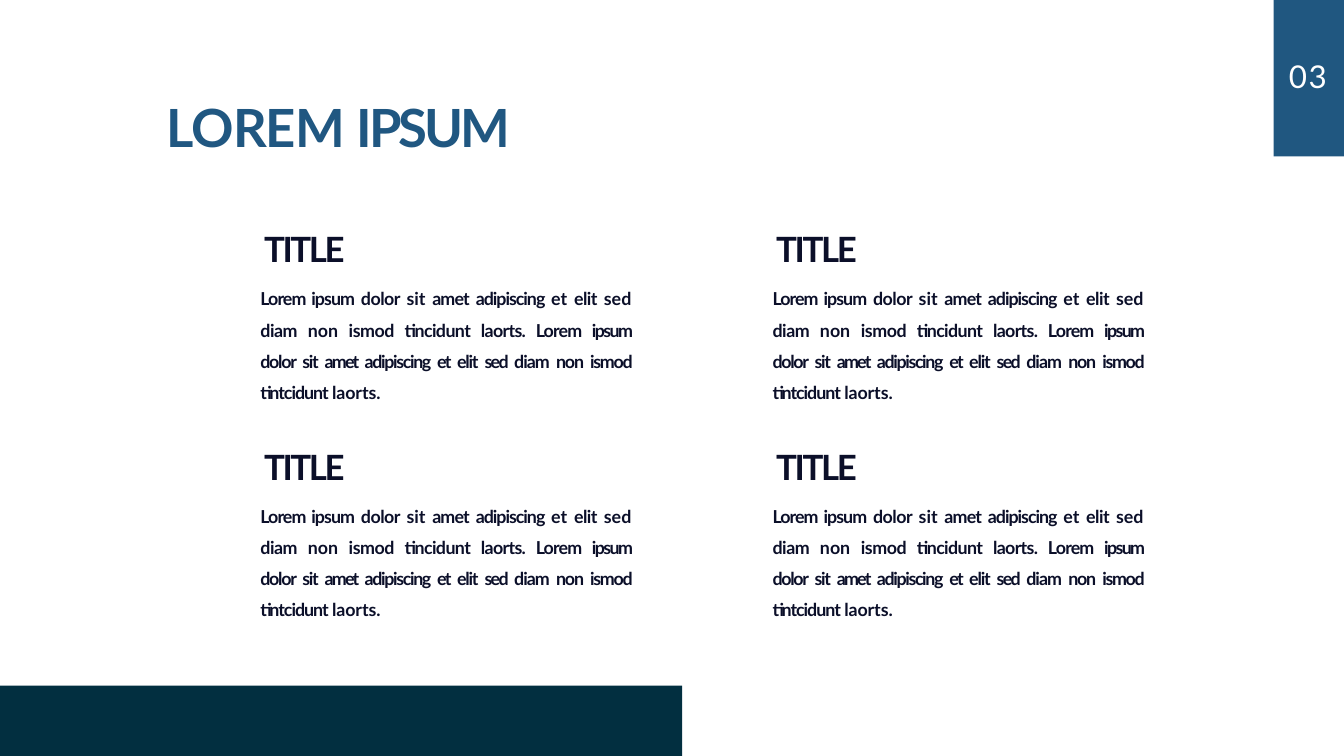
from pptx import Presentation
from pptx.dml.color import RGBColor
from pptx.enum.shapes import MSO_SHAPE as Shape
from pptx.enum.text import MSO_AUTO_SIZE as AutoSize, PP_ALIGN as Align
from pptx.util import Inches, Pt

WIDTH, HEIGHT = 21.99, 12.37
FONT = "Lato"
COLORS = {"blue": "205781", "tab": "205780", "navy": "022F40",
          "ink": "0B0F29", "white": "FFFFFF"}

# Each run is (text, letter spacing in points)
HEADING = [("LOREM ", -1.3), ("IPSUM", -3.6)]
NUMBER = [("03", 1.9)]
TITLE = [("TITLE", -2.8)]
BODY = [
    ("Lorem ipsum ", -1.1), ("dolor ", -0.6), ("sit ", 0), ("amet ", -1),
    ("adipiscing ", -1.2), ("et ", 0), ("elit ", -0.6), ("sed ", 0),
    ("diam ", -0.5), ("non ", 0), ("ismod ", -0.5), ("tincidunt ", -0.7),
    ("laorts. ", -0.8), ("Lorem ", -1), ("ipsum ", -1.9), ("dolor ", -1.5),
    ("sit ", -1.6), ("amet ", -2.1), ("adipiscing ", -1.6), ("et ", -2),
    ("elit ", -1.4), ("sed ", -2), ("diam ", -1.1), ("non ", -1.4),
    ("ismod ", -1.5), ("tintcidunt ", -1.2), ("laorts.", -0.1),
]
SECTIONS_PER_COLUMN = 2
COLUMNS = 2
COLUMN_LEFT, COLUMN_TOP, COLUMN_STEP = 4.25, 3.7, 8.38
COLUMN_WIDTH, COLUMN_HEIGHT = 6.08, 6.48
SECTION_GAP = 50.3

BAND_WIDTH, BAND_HEIGHT = 11.16, 1.15
TAB_WIDTH, TAB_HEIGHT = 1.15, 2.56


def color(name):
    return RGBColor.from_string(COLORS[name])


def add_text_frame(page, left, top, width, height):
    box = page.shapes.add_textbox(*map(Inches, (left, top, width, height)))
    frame = box.text_frame
    frame.word_wrap = True
    frame.auto_size = AutoSize.SHAPE_TO_FIT_TEXT
    frame.margin_left = frame.margin_right = frame.margin_bottom = 0
    frame.margin_top = Inches(0.02)
    return frame


def fill_paragraph(para, runs, size, ink, bold=True, indent=0.01):
    para._p.get_or_add_pPr().set("marL", str(Inches(indent)))
    for text, spacing in runs:
        run = para.add_run()
        run.text = text
        run.font.name = FONT
        run.font.size = Pt(size)
        run.font.bold = bold
        run.font.color.rgb = color(ink)
        run._r.get_or_add_rPr().set("spc", str(round(spacing * 100)))


def add_column(page, left):
    frame = add_text_frame(page, left, COLUMN_TOP, COLUMN_WIDTH, COLUMN_HEIGHT)
    for section in range(SECTIONS_PER_COLUMN):
        if section == 0:
            title = frame.paragraphs[0]
        else:
            title = frame.add_paragraph()
            title.space_before = Pt(SECTION_GAP)
        fill_paragraph(title, TITLE, 41, "ink", indent=0.07)

        body = frame.add_paragraph()
        body.alignment = Align.JUSTIFY
        body.line_spacing = 1.45
        body.space_before = Pt(11.1)
        fill_paragraph(body, BODY, 21, "ink")


def add_block(page, left, top, width, height, fill):
    block = page.shapes.add_shape(
        Shape.RECTANGLE, *map(Inches, (left, top, width, height)))
    block.shadow.inherit = False
    block.fill.solid()
    block.fill.fore_color.rgb = color(fill)
    block.line.fill.background()


def main():
    deck = Presentation()
    deck.slide_width, deck.slide_height = Inches(WIDTH), Inches(HEIGHT)
    page = deck.slides.add_slide(deck.slide_layouts[6])

    heading = add_text_frame(page, 2.72, 1.53, 5.96, 1.07)
    fill_paragraph(heading.paragraphs[0], HEADING, 62, "blue")

    for column in range(COLUMNS):
        add_column(page, COLUMN_LEFT + column * COLUMN_STEP)

    add_block(page, 0, HEIGHT - BAND_HEIGHT, BAND_WIDTH, BAND_HEIGHT, "navy")
    add_block(page, WIDTH - TAB_WIDTH, 0, TAB_WIDTH, TAB_HEIGHT, "tab")

    number = add_text_frame(page, 21.08, 0.91, 0.66, 0.65)
    fill_paragraph(number.paragraphs[0], NUMBER, 37, "white", bold=False)

    deck.save("out.pptx")


if __name__ == "__main__":
    main()
